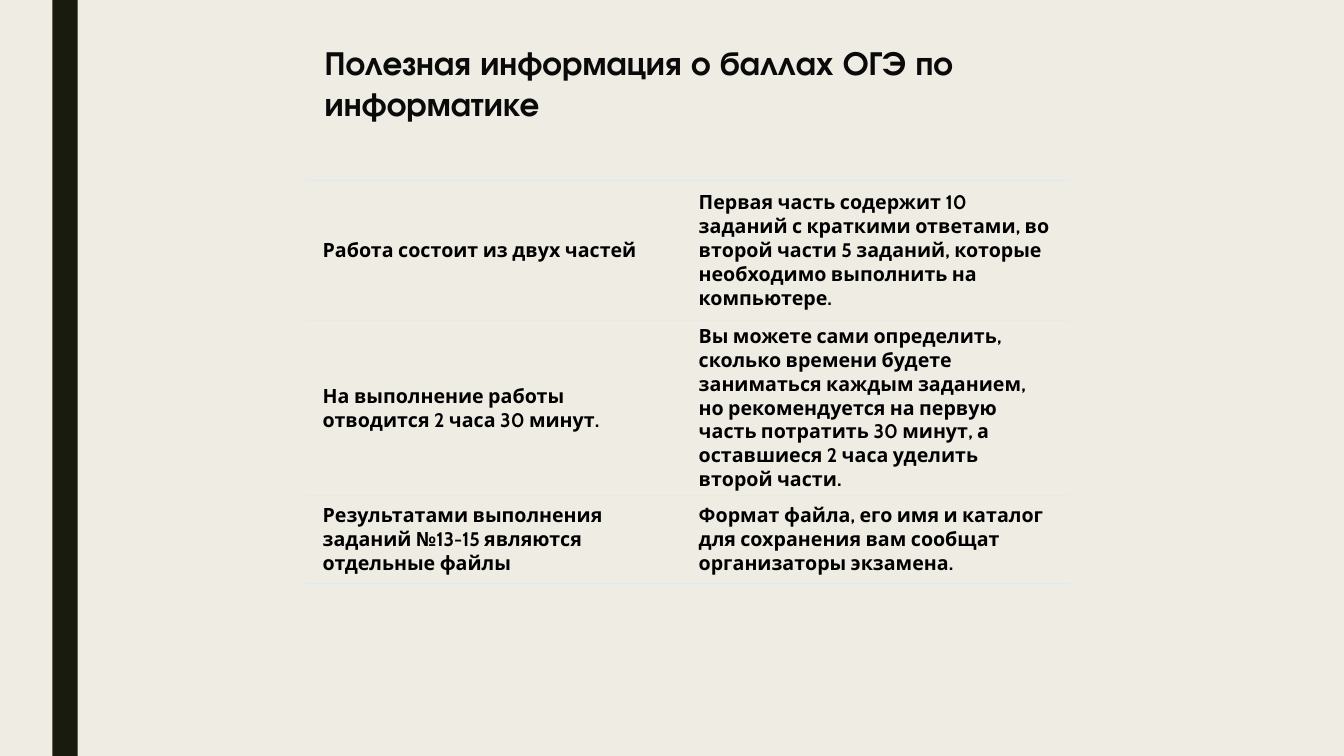
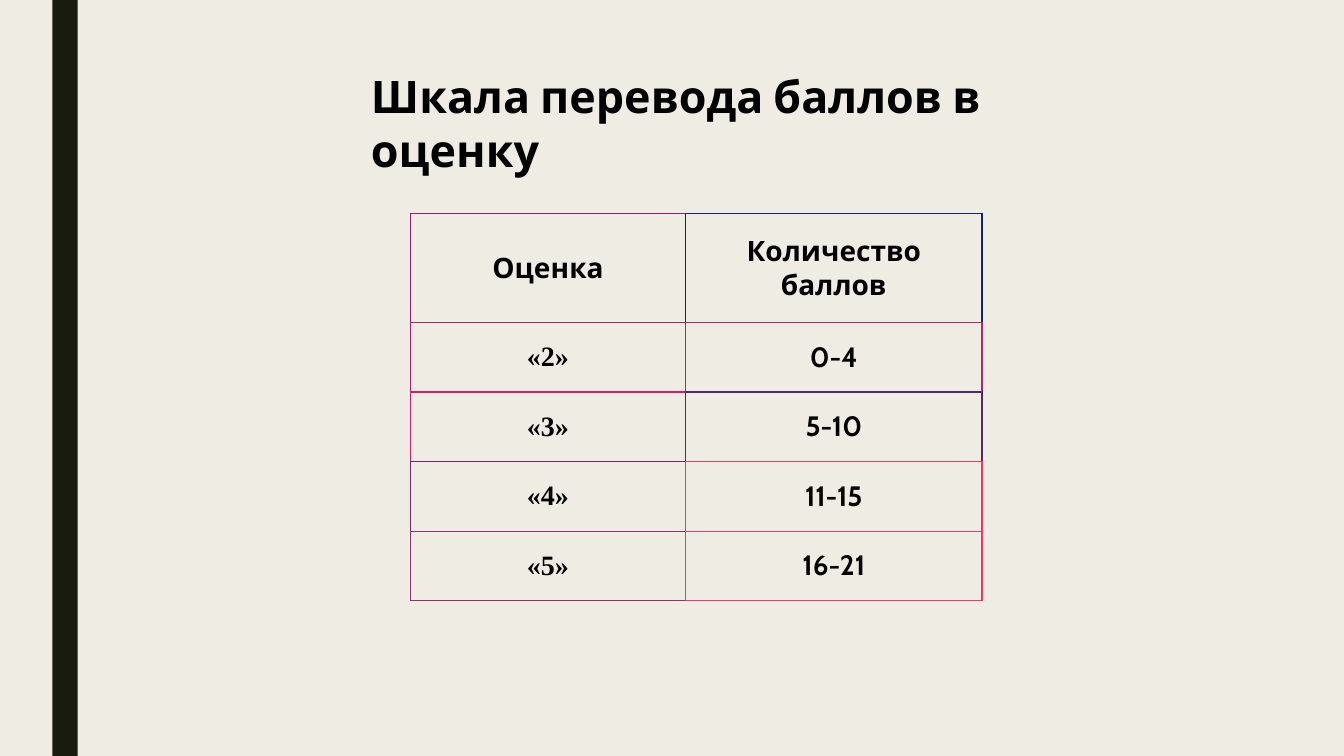
from dataclasses import dataclass

from lxml.etree import SubElement
from pptx import Presentation
from pptx.dml.color import RGBColor
from pptx.enum.shapes import MSO_SHAPE
from pptx.enum.text import MSO_ANCHOR, PP_ALIGN
from pptx.oxml.ns import qn
from pptx.util import Inches, Pt


@dataclass(frozen=True)
class Theme:
    background: str = "EFEDE3"
    band: str = "191B0E"
    text: str = "000000"
    soft_title: str = "0A0A0A"
    outer_rule: str = "D9EAFA"
    inner_rule: str = "EBEAE2"
    body_font: str = "Cabin"
    title_font: str = "TeX Gyre Adventor"
    grade_font: str = "Times New Roman"
    small_title_size: int = 24
    large_title_size: int = 32
    facts_size: int = 14
    scale_size: int = 20


THEME = Theme()

FACTS = [
    ("Работа состоит из двух частей",
     "Первая часть содержит 10 заданий с краткими ответами, во второй части "
     "5 заданий, которые необходимо выполнить на компьютере."),
    ("На выполнение работы отводится 2 часа 30 минут.",
     "Вы можете сами определить, сколько времени будете заниматься каждым "
     "заданием, но рекомендуется на первую часть потратить 30 минут, "
     "а оставшиеся 2 часа уделить второй части."),
    ("Результатами выполнения заданий №13-15 являются отдельные файлы",
     "Формат файла, его имя и каталог для сохранения вам сообщат "
     "организаторы экзамена."),
]

SCALE = [
    ("Оценка", "Количество баллов"),
    ("«2»", "0-4"),
    ("«3»", "5-10"),
    ("«4»", "11-15"),
    ("«5»", "16-21"),
]

SCALE_COLORS = [
    ("901F71", "102671"),
    ("B02271", "B02471"),
    ("D01F71", "502871"),
    ("702871", "F03571"),
    ("903271", "F03571"),
]


def set_attributes(target, values):
    for name, value in values.items():
        setattr(target, name, value)


def write_text(frame, text, size, font, color=THEME.text, align=PP_ALIGN.LEFT):
    para = frame.paragraphs[0]
    para.alignment = align
    span = para.add_run()
    span.text = text
    set_attributes(span.font, {"size": Pt(size), "name": font, "bold": True})
    span.font.color.rgb = RGBColor.from_string(color)


def add_page(deck):
    page = deck.slides.add_slide(deck.slide_layouts[6])
    band = page.shapes.add_shape(
        MSO_SHAPE.RECTANGLE, Inches(0.52), 0, Inches(0.25), deck.slide_height)
    band.shadow.inherit = False
    band.fill.solid()
    band.fill.fore_color.rgb = RGBColor.from_string(THEME.band)
    band.line.fill.background()
    return page


def add_title(page, text, left, top, width, height, size, font, color):
    box = page.shapes.add_textbox(*map(Inches, (left, top, width, height)))
    set_attributes(box.text_frame, {
        "word_wrap": True, "vertical_anchor": MSO_ANCHOR.TOP,
        "margin_left": 0, "margin_right": 0,
        "margin_top": 0, "margin_bottom": 0})
    write_text(box.text_frame, text, size, font, color)


def set_borders(cell, colors, width):
    """Draw left, right, top and bottom edges; None leaves an edge empty."""
    properties = cell._tc.get_or_add_tcPr()
    for side, color in zip("LRTB", colors):
        line = SubElement(properties, qn(f"a:ln{side}"), w=str(Pt(width)))
        if color is None:
            SubElement(line, qn("a:noFill"))
        else:
            fill = SubElement(line, qn("a:solidFill"))
            SubElement(fill, qn("a:srgbClr"), val=color)


def add_grid(page, rows, left, top, widths, heights, margins, line_width,
             edge_colors, text_format):
    """Add a table; edge_colors and text_format map (row, column) to a style."""
    frame = page.shapes.add_table(
        len(heights), len(widths), Inches(left), Inches(top),
        Inches(sum(widths)), Inches(sum(heights)))
    table = frame.table
    set_attributes(table, {"first_row": False, "horz_banding": False})
    for column, width in zip(table.columns, widths):
        column.width = Inches(width)
    for row, height in zip(table.rows, heights):
        row.height = Inches(height)

    side, end = map(Inches, margins)
    for i, texts in enumerate(rows):
        for j, text in enumerate(texts):
            cell = table.cell(i, j)
            set_attributes(cell, {
                "vertical_anchor": MSO_ANCHOR.MIDDLE,
                "margin_left": side, "margin_right": side,
                "margin_top": end, "margin_bottom": end})
            set_borders(cell, edge_colors(i, j), line_width)
            cell.fill.background()
            write_text(cell.text_frame, text, **text_format(i, j))


def facts_edges(row, column):
    above = THEME.outer_rule if row == 0 else THEME.inner_rule
    below = THEME.outer_rule if row == len(FACTS) - 1 else THEME.inner_rule
    return None, None, above, below


def facts_format(row, column):
    return {"size": THEME.facts_size, "font": THEME.body_font}


def scale_edges(row, column):
    """Each cell colours its left and top; neighbours colour the other edges."""
    own = SCALE_COLORS[row][column]
    below = SCALE_COLORS[min(row + 1, len(SCALE) - 1)][column]
    return own, SCALE_COLORS[row][1], own, below


def scale_format(row, column):
    is_grade = row > 0 and column == 0
    return {"size": THEME.scale_size, "align": PP_ALIGN.CENTER,
            "font": THEME.grade_font if is_grade else THEME.body_font}


def add_facts_page(deck):
    page = add_page(deck)
    add_grid(page, FACTS, 3.02, 1.79, [3.73, 3.86], [1.39, 1.73, 0.87],
             (0.18, 0.04), 0.75, facts_edges, facts_format)
    add_title(page, "Полезная информация о баллах ОГЭ по информатике",
              3.22, 0.42, 7.98, 0.8,
              THEME.small_title_size, THEME.title_font, THEME.soft_title)


def add_scale_page(deck):
    page = add_page(deck)
    add_grid(page, SCALE, 4.07, 2.12, [2.73, 2.94], [1.08] + [0.69] * 4,
             (0.17, 0.12), 1, scale_edges, scale_format)
    add_title(page, "Шкала перевода баллов в оценку", 3.68, 0.68, 7.5, 1.08,
              THEME.large_title_size, THEME.body_font, THEME.text)


def main():
    deck = Presentation()
    set_attributes(deck, {"slide_width": Inches(13.33),
                          "slide_height": Inches(7.5)})
    backdrop = deck.slide_master.background.fill
    backdrop.solid()
    backdrop.fore_color.rgb = RGBColor.from_string(THEME.background)
    add_facts_page(deck)
    add_scale_page(deck)
    deck.save("out.pptx")


if __name__ == "__main__":
    main()
